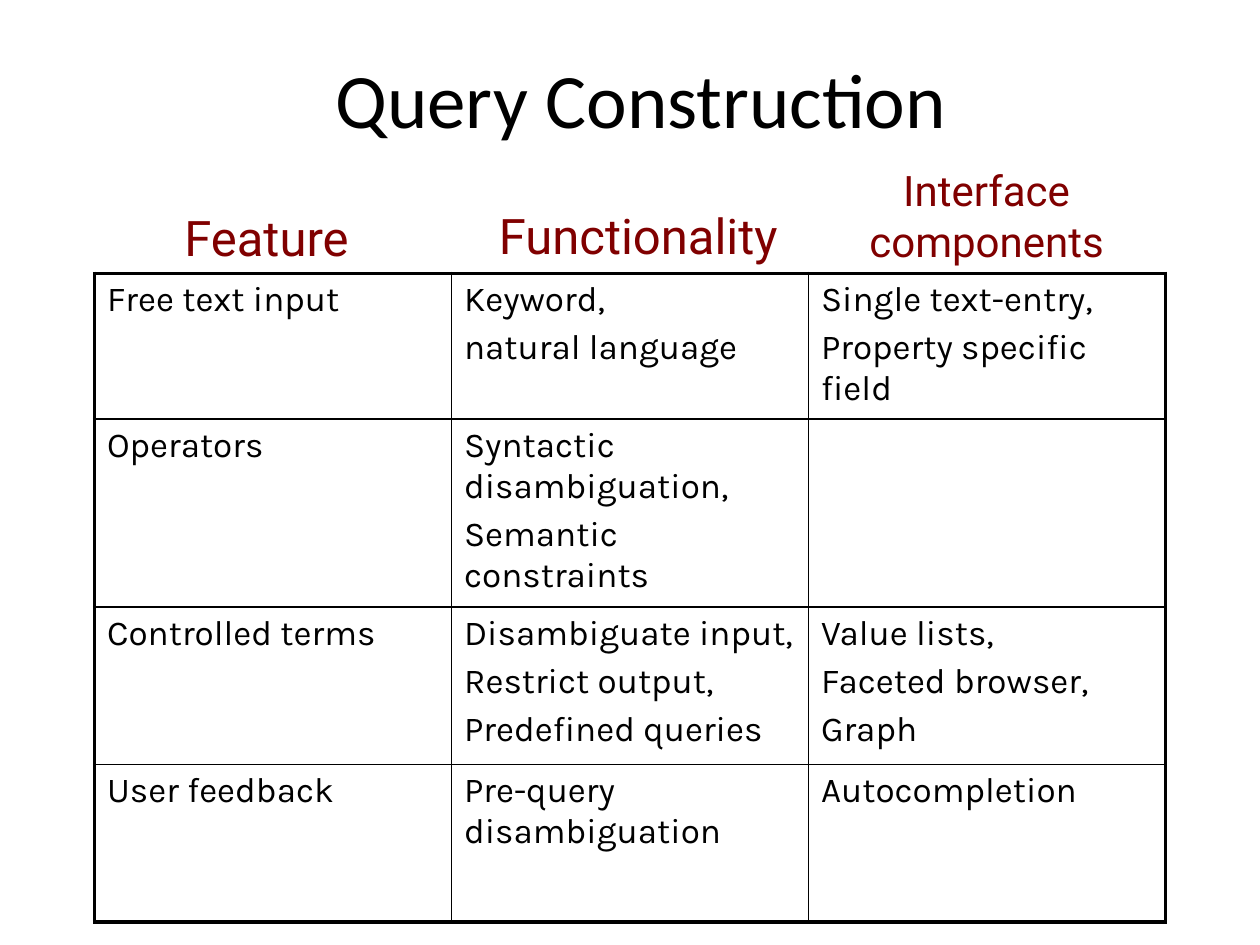
from lxml.etree import SubElement as Sub
from pptx import Presentation
from pptx.dml.color import RGBColor as Rgb
from pptx.enum.text import MSO_ANCHOR as Anchor, PP_ALIGN as Align
from pptx.oxml.ns import qn
from pptx.util import Inches, Pt

HUES = {"ink": "000000", "head": "800000", "paper": "FFFFFF"}

TITLE = ("Query Construction", (0.44, 0.15, 9.3, 1.25))
HEADS = [
    ("Feature", (1.35, 1.6, 1.53, 0.57), 28),
    ("Functionality", (3.85, 1.58, 2.43, 0.57), 28),
    ("Interface\vcomponents", (6.74, 1.26, 2.18, 0.91), 24),
]
ROWS = [
    (0.92, [["Free text input"],
            ["Keyword,", "natural language"],
            ["Single text-entry,", "Property specific field"]]),
    (1.33, [["Operators"],
            ["Syntactic disambiguation,", "Semantic constraints"],
            []]),
    (1.25, [["Controlled terms"],
            ["Disambiguate input,", "Restrict output,", "Predefined queries"],
            ["Value lists,", "Faceted browser,", "Graph"]]),
    (1.25, [["User feedback"],
            ["Pre-query disambiguation"],
            ["Autocompletion"]]),
]
GRID = (0.75, 2.17, 8.5, 4.75)
COLS = 3
THIN, THICK = 1, 2.25


def write(frame, lines, font, size, hue="ink", align=Align.LEFT, gap=0):
    for i, line in enumerate(lines):
        para = frame.paragraphs[0] if i == 0 else frame.add_paragraph()
        para.text = line
        para.alignment = align
        if i:
            para.space_before = Pt(gap)
        para.font.name = font
        para.font.size = Pt(size)
        para.font.color.rgb = Rgb.from_string(HUES[hue])


def add_text(slide, text, box, wrap=False, anchor=Anchor.TOP, **style):
    frame = slide.shapes.add_textbox(*map(Inches, box)).text_frame
    frame.word_wrap = wrap
    frame.vertical_anchor = anchor
    write(frame, [text], align=Align.CENTER, **style)


def edge(cell, outer):
    props = cell._tc.get_or_add_tcPr()
    for side, thick in outer.items():
        line = Sub(props, qn(f"a:ln{side}"), w=str(Pt(THICK if thick else THIN)))
        Sub(Sub(line, qn("a:solidFill")), qn("a:srgbClr"), val=HUES["ink"])


def add_grid(slide):
    shape = slide.shapes.add_table(len(ROWS), COLS, *map(Inches, GRID))
    table = shape.table
    table.first_row = table.horz_banding = False
    for col in table.columns:
        col.width = Inches(GRID[2] / COLS)
    for r, (height, cells) in enumerate(ROWS):
        table.rows[r].height = Inches(height)
        for c, lines in enumerate(cells):
            cell = table.cell(r, c)
            write(cell.text_frame, lines, font="Karla", size=20, gap=4)
            edge(cell, {"L": c == 0, "R": c == COLS - 1,
                        "T": r == 0, "B": r == len(ROWS) - 1})
            cell.fill.solid()
            cell.fill.fore_color.rgb = Rgb.from_string(HUES["paper"])


def main():
    deck = Presentation()
    deck.slide_width, deck.slide_height = Inches(10), Inches(7.5)
    slide = deck.slides.add_slide(deck.slide_layouts[6])
    text, box = TITLE
    add_text(slide, text, box, wrap=True, anchor=Anchor.MIDDLE,
             font="Calibri", size=44)
    add_grid(slide)
    for text, box, size in HEADS:
        add_text(slide, text, box, font="Roboto", size=size, hue="head")
    deck.save("out.pptx")


if __name__ == "__main__":
    main()
